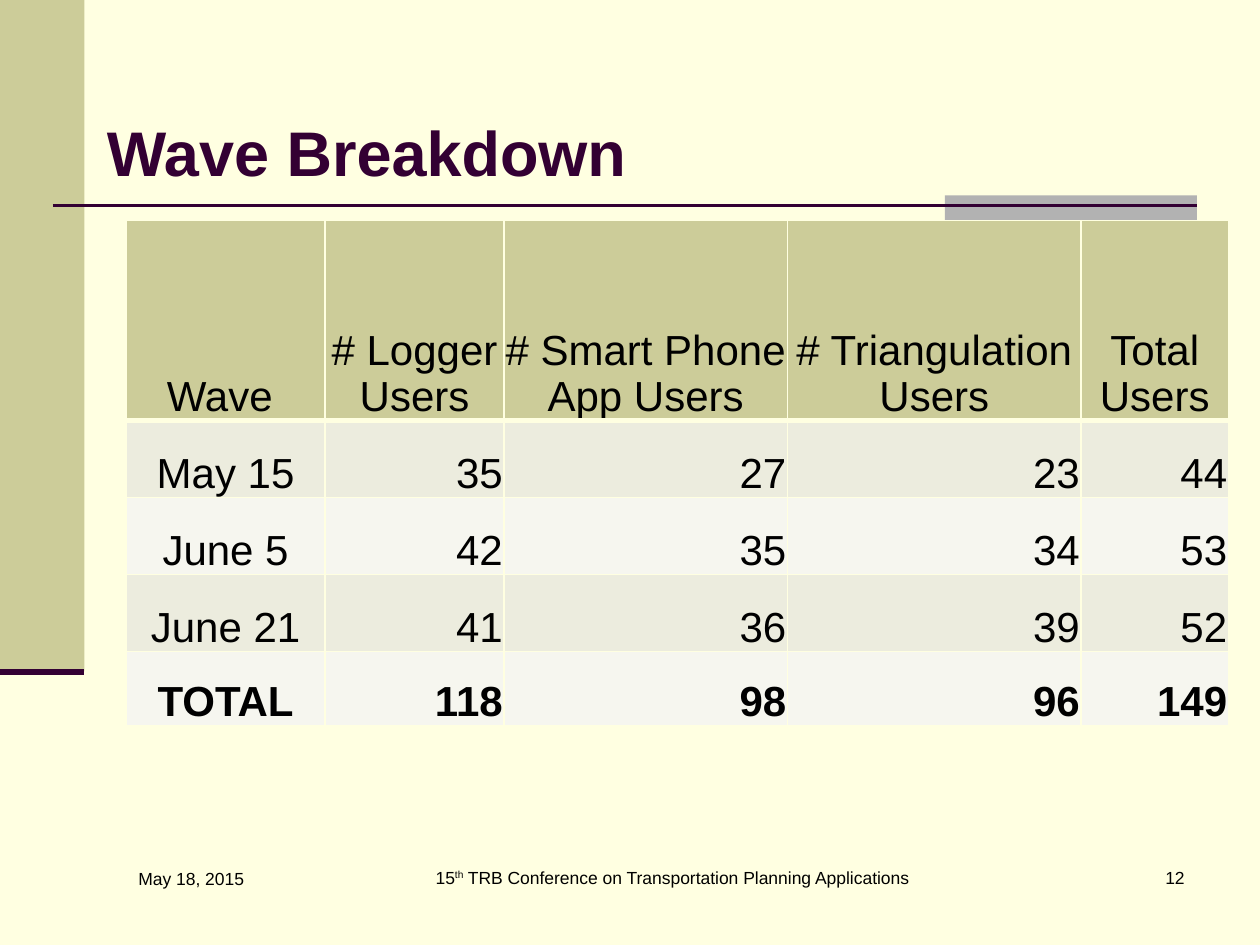
from lxml import etree
from pptx import Presentation
from pptx.dml.color import RGBColor
from pptx.enum.shapes import MSO_CONNECTOR, MSO_SHAPE
from pptx.enum.text import MSO_ANCHOR, PP_ALIGN
from pptx.oxml.ns import qn
from pptx.util import Inches, Pt

CREAM = RGBColor(0xFF, 0xFF, 0xE1)
KHAKI = RGBColor(0xCC, 0xCC, 0x99)
GRAY = RGBColor(0xB2, 0xB2, 0xB2)
PLUM = RGBColor(0x33, 0x00, 0x33)
BLACK = RGBColor(0x00, 0x00, 0x00)
BAND_DARK = RGBColor(0xEC, 0xEC, 0xDE)
BAND_LIGHT = RGBColor(0xF6, 0xF6, 0xEF)

LEFT, CENTER, RIGHT = PP_ALIGN.LEFT, PP_ALIGN.CENTER, PP_ALIGN.RIGHT
BOTTOM = MSO_ANCHOR.BOTTOM
RECTANGLE = MSO_SHAPE.RECTANGLE
STRAIGHT = MSO_CONNECTOR.STRAIGHT

COLUMN_WIDTHS = [1.58, 1.42, 2.25, 2.33, 1.17]
ROW_HEIGHTS = [1.59, 0.61, 0.61, 0.61, 0.59]
WAVE_ROWS = [
    ["Wave ", "# Logger Users", "# Smart Phone App Users",
     "# Triangulation Users", "Total Users"],
    ["May 15", "35", "27", "23", "44"],
    ["June 5", "42", "35", "34", "53"],
    ["June 21", "41", "36", "39", "52"],
    ["TOTAL", "118", "98", "96", "149"],
]


class SlideBuilder:
    font_name = "Arial"

    def __init__(self, slide):
        self.slide = slide
        slide.background.fill.solid()
        slide.background.fill.fore_color.rgb = CREAM

    def rectangle(self, left, top, width, height, color):
        shape = self.slide.shapes.add_shape(
            RECTANGLE, Inches(left), Inches(top), Inches(width), Inches(height))
        shape.shadow.inherit = False
        shape.fill.solid()
        shape.fill.fore_color.rgb = color
        shape.line.fill.background()

    def horizontal_line(self, start, end, y, width):
        line = self.slide.shapes.add_connector(
            STRAIGHT, Inches(start), Inches(y), Inches(end), Inches(y))
        line.line.color.rgb = PLUM
        line.line.width = Pt(width)
        etree.SubElement(line._element.spPr, qn("a:effectLst"))

    def style(self, paragraph, size, color=BLACK, bold=False, align=LEFT):
        paragraph.alignment = align
        font = paragraph.font
        font.name = self.font_name
        font.size = Pt(size)
        font.bold = bold
        font.color.rgb = color

    def text(self, left, top, width, height, parts, size, **style):
        """Add a one-paragraph box; every second part is superscript."""
        box = self.slide.shapes.add_textbox(
            Inches(left), Inches(top), Inches(width), Inches(height))
        box.text_frame.word_wrap = True
        paragraph = box.text_frame.paragraphs[0]
        for index, part in enumerate(parts):
            run = paragraph.add_run()
            run.text = part
            if index % 2:
                run._r.get_or_add_rPr().set("baseline", "30000")
        self.style(paragraph, size, **style)
        return paragraph

    def borders(self, cell, top, bottom):
        properties = cell._tc.get_or_add_tcPr()
        for side, width in (("L", 1), ("R", 1), ("T", top), ("B", bottom)):
            line = etree.SubElement(properties, qn(f"a:ln{side}"), w=str(Pt(width)))
            fill = etree.SubElement(line, qn("a:solidFill"))
            etree.SubElement(fill, qn("a:srgbClr"), val=str(CREAM))

    def table(self, left, top, rows, widths, heights):
        table = self.slide.shapes.add_table(
            len(rows), len(widths), Inches(left), Inches(top),
            Inches(sum(widths)), Inches(sum(heights))).table
        for column, width in zip(table.columns, widths):
            column.width = Inches(width)
        for row, height in zip(table.rows, heights):
            row.height = Inches(height)
        for row_index, values in enumerate(rows):
            header = row_index == 0
            band = BAND_DARK if row_index % 2 else BAND_LIGHT
            for column_index, value in enumerate(values):
                cell = table.cell(row_index, column_index)
                cell.text = value
                cell.vertical_anchor = BOTTOM
                cell.margin_left = cell.margin_right = cell.margin_top = Inches(0.01)
                cell.margin_bottom = 0
                self.borders(cell, 3 if row_index == 1 else 1, 3 if header else 1)
                cell.fill.solid()
                cell.fill.fore_color.rgb = KHAKI if header else band
                self.style(cell.text_frame.paragraphs[0], 24,
                           bold=row_index == len(rows) - 1,
                           align=CENTER if header or column_index == 0 else RIGHT)


def main():
    presentation = Presentation()
    presentation.slide_width = Inches(10)
    presentation.slide_height = Inches(7.5)
    builder = SlideBuilder(
        presentation.slides.add_slide(presentation.slide_layouts[6]))

    builder.rectangle(0, 0, 0.67, 5.33, KHAKI)
    builder.rectangle(7.5, 1.55, 2, 0.2, GRAY)
    builder.horizontal_line(0.42, 9.5, 1.63, 1.5)
    builder.horizontal_line(0, 0.67, 5.33, 3.5)

    builder.text(1, 6.84, 2.17, 0.5, ["May 18, 2015"], 10)
    builder.text(1.42, 6.83, 7.83, 0.5,
                 ["15", "th", " TRB Conference on Transportation Planning Applications"],
                 10, align=CENTER)
    builder.text(7.42, 6.83, 2.08, 0.5, ["12"], 10, align=RIGHT)

    title = builder.text(0.75, 0.92, 8.42, 0.64, ["Wave Breakdown"], 36,
                         color=PLUM, bold=True)
    title.line_spacing = 0.9
    builder.table(1, 1.75, WAVE_ROWS, COLUMN_WIDTHS, ROW_HEIGHTS)
    presentation.save("out.pptx")


if __name__ == "__main__":
    main()
